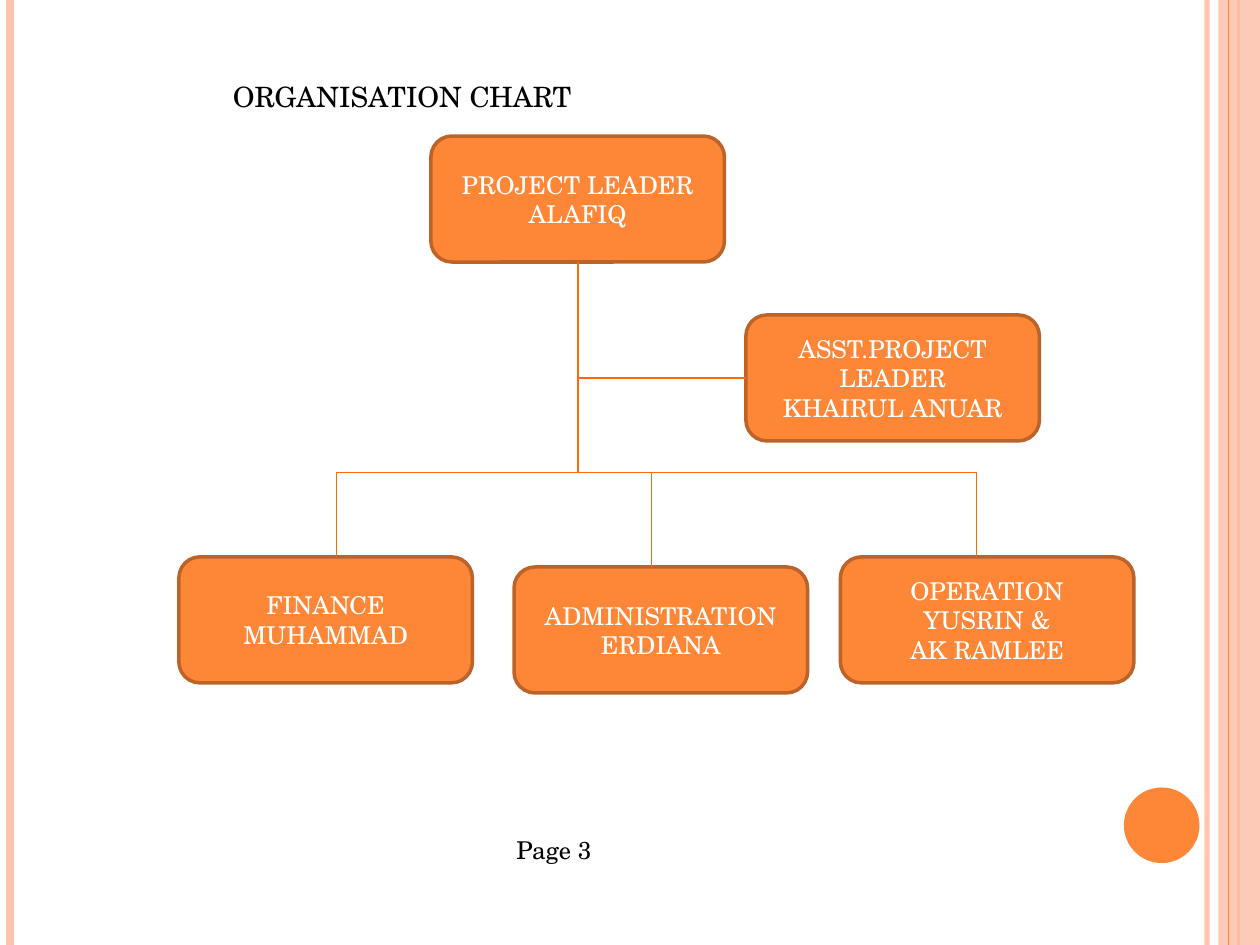
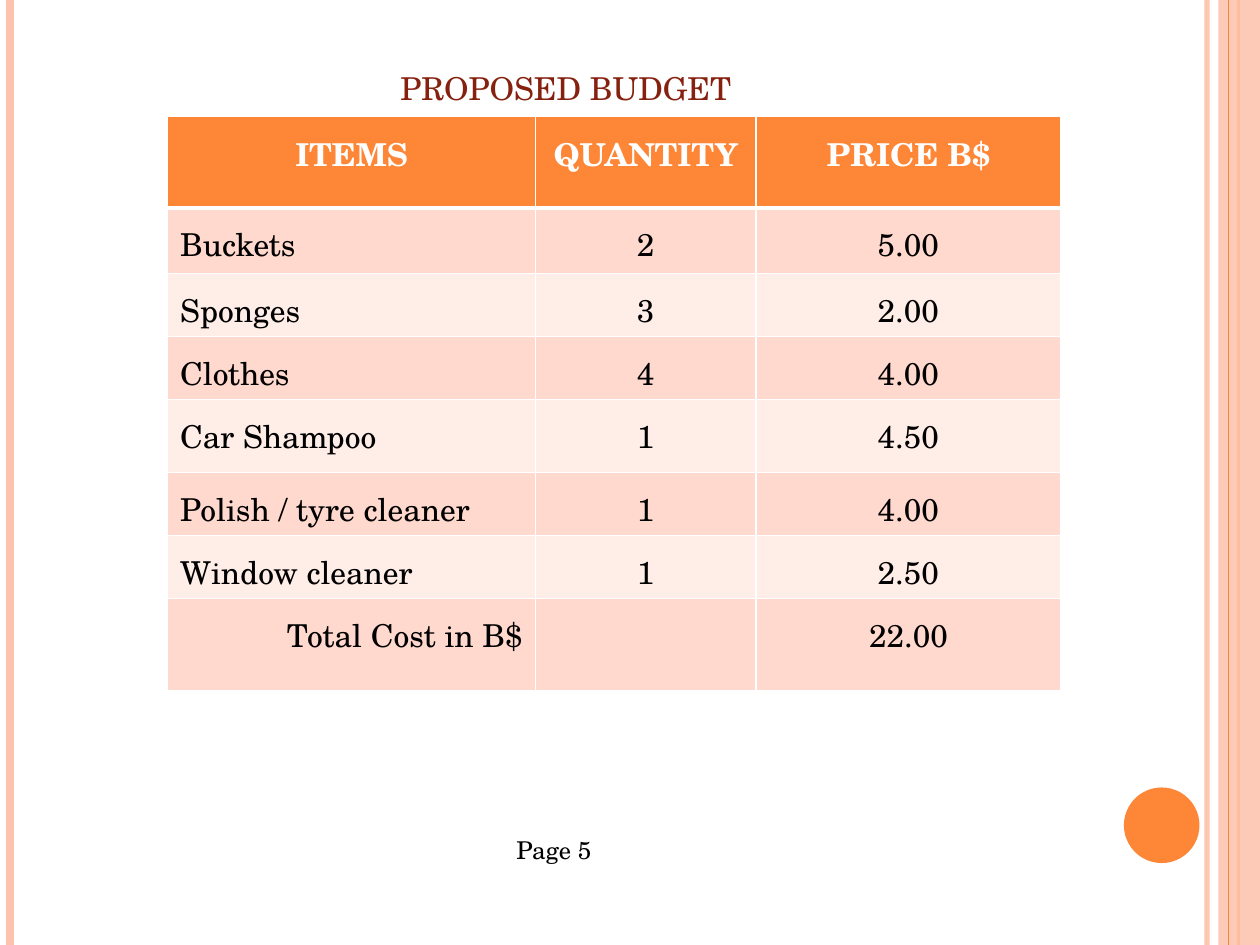
from lxml import etree
from pptx import Presentation
from pptx.dml.color import RGBColor
from pptx.enum.shapes import MSO_CONNECTOR, MSO_SHAPE
from pptx.enum.text import MSO_ANCHOR, PP_ALIGN
from pptx.oxml.ns import qn
from pptx.util import Inches, Pt

LEFT, CENTER, RIGHT = PP_ALIGN.LEFT, PP_ALIGN.CENTER, PP_ALIGN.RIGHT
TOP, MIDDLE = MSO_ANCHOR.TOP, MSO_ANCHOR.MIDDLE
STRAIGHT = MSO_CONNECTOR.STRAIGHT
RECT, ROUND, OVAL = MSO_SHAPE.RECTANGLE, MSO_SHAPE.ROUNDED_RECTANGLE, MSO_SHAPE.OVAL

FONT = "TeX Gyre Schola"
BLACK, WHITE = "000000", "FFFFFF"
ORANGE, PEACH, BROWN = "FE8637", "FEC3AE", "BC6329"
LINK, RUST = "FF6B0A", "862110"
BANDS = ["FFD9CE", "FFEDE8"]
WIDE, HIGH = 10, 7.5

# Each unit: left and top within the chart area, then its lines of text
UNITS = {
    "leader": (2, 0, "PROJECT LEADER\nALAFIQ"),
    "deputy": (4.5, 1.42, "ASST.PROJECT LEADER\nKHAIRUL ANUAR"),
    "finance": (0, 3.34, "FINANCE\nMUHAMMAD"),
    "admin": (2.66, 3.42, "ADMINISTRATION\nERDIANA"),
    "field": (5.25, 3.34, "OPERATION\nYUSRIN &\nAK RAMLEE"),
}
UNIT_W, UNIT_H = 2.33, 1

COLS = [2.92, 1.75, 2.42]
ROWS = [0.73, 0.52, 0.5, 0.5, 0.58, 0.5, 0.5, 0.73]
BUDGET = [
    ("ITEMS", "QUANTITY", "PRICE B$"),
    ("Buckets", "2", "5.00"),
    ("Sponges", "3", "2.00"),
    ("Clothes", "4", "4.00"),
    ("Car Shampoo", "1", "4.50"),
    ("Polish / tyre cleaner", "1", "4.00"),
    ("Window cleaner", "1", "2.50"),
    ("Total Cost in B$", "", "22.00"),
]


def rgb(code):
    return RGBColor.from_string(code)


def fade(fill, alpha):
    """Make a solid fill see-through, alpha in percent."""
    tone = fill._xPr.find(qn("a:solidFill"))[0]
    etree.SubElement(tone, qn("a:alpha"), val=str(alpha * 1000))


def write(frame, text, size=14, color=BLACK, bold=False, align=LEFT,
          anchor=TOP, space=None):
    frame.vertical_anchor = anchor
    for i, part in enumerate(text.split("\n")):
        para = frame.add_paragraph() if i else frame.paragraphs[0]
        para.alignment = align
        para.line_spacing = space
        font = para.font
        if part:
            run = para.add_run()
            run.text = part
            font = run.font
        font.name, font.size, font.bold = FONT, Pt(size), bold
        font.color.rgb = rgb(color)


def label(slide, left, top, width, height, text, **style):
    box = slide.shapes.add_textbox(*map(Inches, (left, top, width, height)))
    box.text_frame.word_wrap = False
    write(box.text_frame, text, **style)


def block(slide, kind, left, top, width, height, fill, line=None):
    shape = slide.shapes.add_shape(kind, *map(Inches, (left, top, width, height)))
    shape.shadow.inherit = False
    shape.fill.solid()
    shape.fill.fore_color.rgb = rgb(fill)
    if line:
        shape.line.color.rgb = rgb(line)
        shape.line.width = Pt(2)
    else:
        shape.line.fill.background()
    return shape


def stroke(slide, x1, y1, x2, y2, color=LINK, width=1):
    line = slide.shapes.add_connector(STRAIGHT, *map(Inches, (x1, y1, x2, y2)))
    line.line.color.rgb = rgb(color)
    line.line.width = Pt(width)
    etree.SubElement(line._element.spPr, qn("a:effectLst"))
    return line


def frame_page(deck, page):
    """New slide with side bands, dot and page number."""
    slide = deck.slides.add_slide(deck.slide_layouts[6])
    slide.background.fill.solid()
    slide.background.fill.fore_color.rgb = rgb(WHITE)

    def rule(x, color, width):
        return stroke(slide, x, 0, x, HIGH, color, width)

    fade(rule(9.58, PEACH, 3).line.fill, 93)
    rule(0.08, PEACH, 4.5)
    rule(9.83, ORANGE, 1.5)
    fade(block(slide, RECT, 9.67, 0, 0.33, HIGH, PEACH).fill, 87)
    rule(9.75, ORANGE, 0.75)
    block(slide, OVAL, 8.92, 6.25, 0.6, 0.6, ORANGE)
    label(slide, 4, 6.58, 0.81, 0.34, f"Page {page}")
    return slide


def draw_chart(slide, left, top):
    """Organisation chart: rounded units and the lines between them."""
    units = {}
    for name, (x, y, text) in UNITS.items():
        unit = block(slide, ROUND, left + x, top + y, UNIT_W, UNIT_H, ORANGE, BROWN)
        unit.text_frame.word_wrap = True
        write(unit.text_frame, text, color=WHITE, align=CENTER, anchor=MIDDLE)
        units[name] = unit

    # Trunk and side branch
    trunk = left + UNITS["leader"][0] + UNIT_W / 2
    side = top + UNITS["deputy"][1] + UNIT_H / 2
    bar = top + 2.67
    stem = stroke(slide, trunk, top + UNIT_H, trunk, bar)
    stem.begin_connect(units["leader"], 2)
    arm = stroke(slide, trunk, side, left + UNITS["deputy"][0], side)
    arm.end_connect(units["deputy"], 1)

    # Crossbar and drops, which meet the units off centre
    drops = {"finance": left + 1.25, "admin": left + 3.75, "field": left + 6.33}
    stroke(slide, drops["finance"], bar, drops["field"], bar)
    for name, x in drops.items():
        stroke(slide, x, bar, x, top + UNITS[name][1])


def edge(cell, side, width):
    """White border on one side of a cell."""
    line = etree.SubElement(cell._tc.get_or_add_tcPr(), qn(f"a:ln{side}"),
                            w=str(Pt(width)))
    solid = etree.SubElement(line, qn("a:solidFill"))
    etree.SubElement(solid, qn("a:srgbClr"), val=WHITE)


def draw_table(slide, left, top):
    """Budget table with a header row and striped body."""
    size = (left, top, sum(COLS), sum(ROWS))
    table = slide.shapes.add_table(len(ROWS), len(COLS), *map(Inches, size)).table
    for col, width in zip(table.columns, COLS):
        col.width = Inches(width)
    for r, texts in enumerate(BUDGET):
        table.rows[r].height = Inches(ROWS[r])
        head, last = r == 0, r == len(BUDGET) - 1
        for c, text in enumerate(texts):
            cell = table.cell(r, c)
            for side in "LRTB":
                thick = (side == "B" and head) or (side == "T" and r == 1)
                edge(cell, side, 3 if thick else 1)
            cell.fill.solid()
            cell.fill.fore_color.rgb = rgb(ORANGE if head else BANDS[(r - 1) % 2])
            align = CENTER if head or c else RIGHT if last else LEFT
            write(cell.text_frame, text, size=18, bold=head, align=align,
                  color=WHITE if head else BLACK, space=1.15)


def main():
    deck = Presentation()
    deck.slide_width, deck.slide_height = Inches(WIDE), Inches(HIGH)

    slide = frame_page(deck, 3)
    draw_chart(slide, 1.42, 1.08)
    label(slide, 1.75, 0.58, 2.93, 0.37, "ORGANISATION CHART", size=16)

    slide = frame_page(deck, 5)
    draw_table(slide, 1.33, 0.92)
    label(slide, 3.08, 0.5, 2.85, 0.4, "PROPOSED BUDGET", size=18, color=RUST)

    deck.save("out.pptx")


if __name__ == "__main__":
    main()
